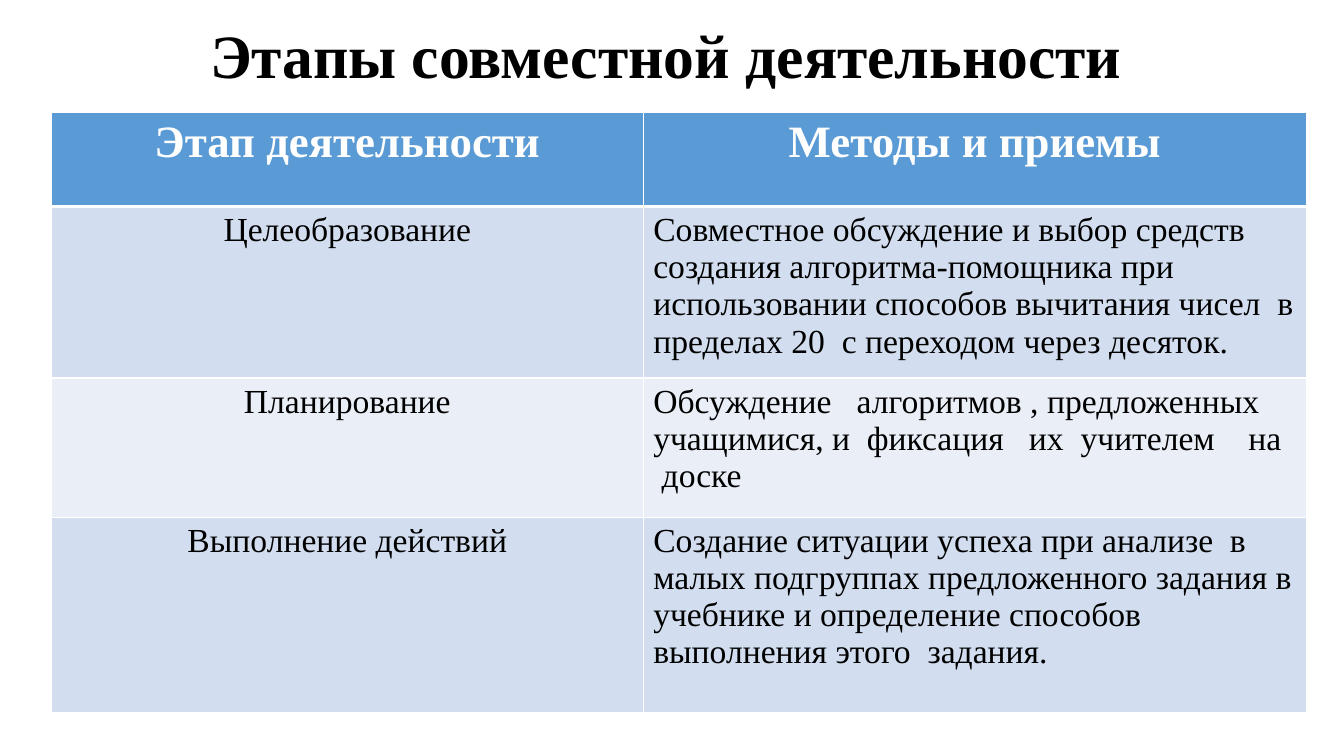
from lxml.etree import SubElement
from pptx import Presentation
from pptx.dml.color import RGBColor
from pptx.enum.text import MSO_ANCHOR, PP_ALIGN
from pptx.oxml.ns import qn
from pptx.util import Inches, Pt

FONT = "Times New Roman"
WHITE, BLACK = "FFFFFF", "000000"
HEADER_FILL = "5B9BD5"
BAND_FILLS = ["D2DEEF", "EAEFF7"]
COLUMN_WIDTHS = [5.87, 6.58]
ROW_HEIGHTS = [0.93, 1.57, 1.38, 1.94]
ROWS = [
    ("Этап деятельности", "Методы и приемы"),
    ("Целеобразование",
     "Совместное обсуждение и выбор средств создания алгоритма-помощника "
     "при использовании способов вычитания чисел  в пределах 20  "
     "с переходом через десяток."),
    ("Планирование",
     "Обсуждение   алгоритмов , предложенных учащимися, и  фиксация   "
     "их  учителем    на   доске"),
    ("Выполнение действий",
     "Создание ситуации успеха при анализе  в малых подгруппах "
     "предложенного задания в учебнике и определение способов "
     "выполнения этого  задания."),
]


def rgb(color):
    return RGBColor.from_string(color)


def write(tf, text, size=24, color=BLACK, bold=False, align=PP_ALIGN.LEFT,
          spacing=None):
    p = tf.paragraphs[0]
    p.alignment = align
    p.line_spacing = spacing
    r = p.add_run()
    r.text = text
    r.font.name = FONT
    r.font.size = Pt(size)
    r.font.bold = bold
    r.font.color.rgb = rgb(color)


def add_title(slide, text):
    box = slide.shapes.add_textbox(Inches(0.86), Inches(0),
                                   Inches(11.5), Inches(1.17))
    tf = box.text_frame
    tf.word_wrap = True
    tf.vertical_anchor = MSO_ANCHOR.MIDDLE
    write(tf, text, size=44, bold=True, align=PP_ALIGN.CENTER, spacing=0.9)


def set_borders(cell, top=1, bottom=1):
    """Draw white borders; call before filling, as lines precede the fill."""
    tc_pr = cell._tc.get_or_add_tcPr()
    for side, width in (("L", 1), ("R", 1), ("T", top), ("B", bottom)):
        ln = SubElement(tc_pr, qn(f"a:ln{side}"), w=str(Pt(width)))
        fill = SubElement(ln, qn("a:solidFill"))
        SubElement(fill, qn("a:srgbClr"), val=WHITE)


def fill_cell(cell, color):
    cell.fill.solid()
    cell.fill.fore_color.rgb = rgb(color)


def add_stage_table(slide):
    frame = slide.shapes.add_table(
        len(ROWS), len(COLUMN_WIDTHS), Inches(0.51), Inches(1.12),
        Inches(sum(COLUMN_WIDTHS)), Inches(sum(ROW_HEIGHTS)))
    table = frame.table
    for column, width in zip(table.columns, COLUMN_WIDTHS):
        column.width = Inches(width)
    for i, (row, height) in enumerate(zip(table.rows, ROW_HEIGHTS)):
        row.height = Inches(height)
        for j, text in enumerate(ROWS[i]):
            cell = table.cell(i, j)
            if i == 0:
                set_borders(cell, bottom=3)
                fill_cell(cell, HEADER_FILL)
                write(cell.text_frame, text, size=32, color=WHITE, bold=True,
                      align=PP_ALIGN.CENTER)
            else:
                set_borders(cell, top=3 if i == 1 else 1)
                fill_cell(cell, BAND_FILLS[(i - 1) % 2])
                align = PP_ALIGN.CENTER if j == 0 else PP_ALIGN.LEFT
                write(cell.text_frame, text, align=align)


def main():
    prs = Presentation()
    prs.slide_width = Inches(13.33)
    prs.slide_height = Inches(7.5)
    slide = prs.slides.add_slide(prs.slide_layouts[6])
    add_title(slide, "Этапы совместной деятельности")
    add_stage_table(slide)
    prs.save("out.pptx")


if __name__ == "__main__":
    main()
